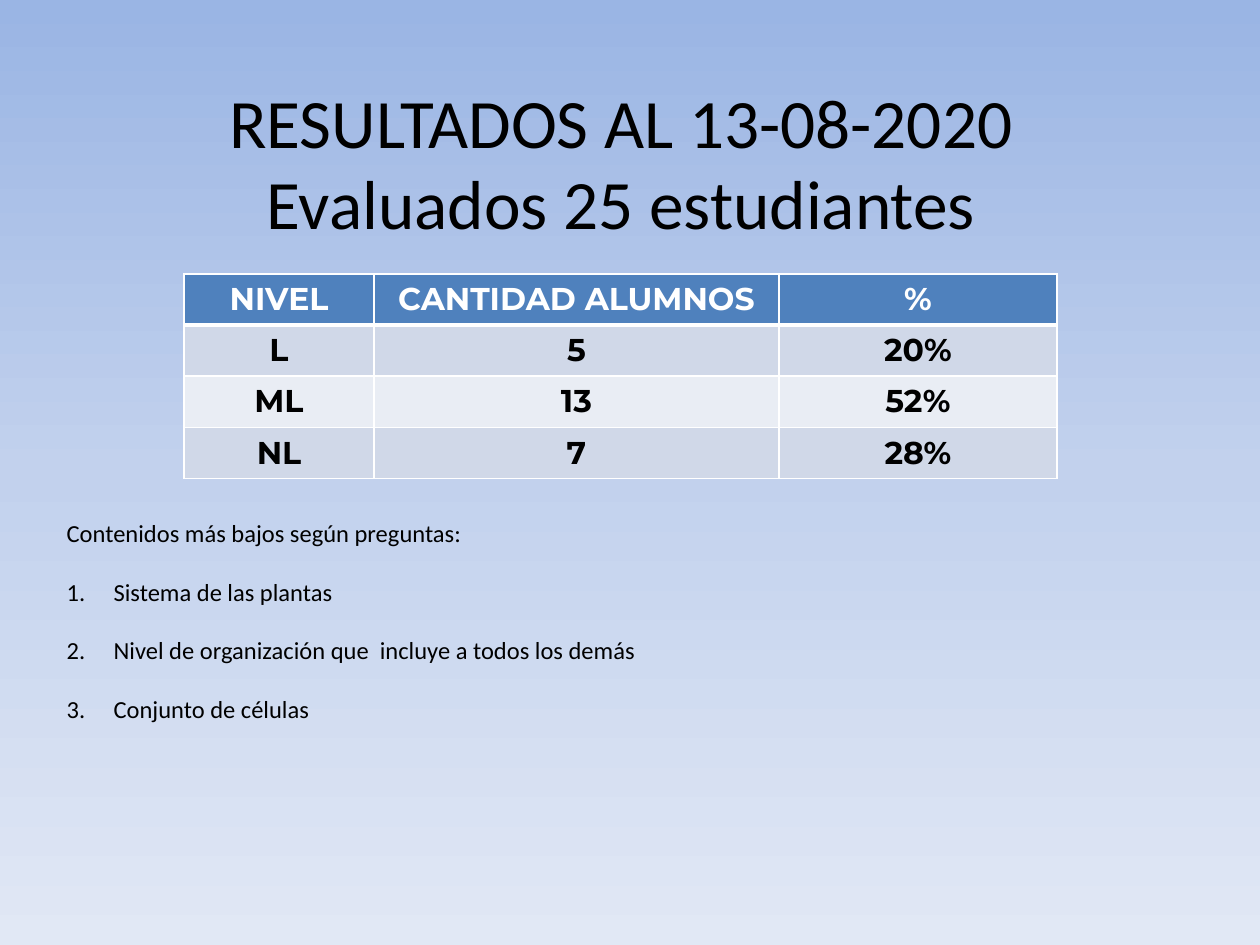
import copy

import pptx
import pptx.dml.color
import pptx.enum.text
import pptx.oxml.ns
import pptx.util
from lxml import etree

RGBColor = pptx.dml.color.RGBColor
BLACK = RGBColor(0x00, 0x00, 0x00)
WHITE = RGBColor(0xFF, 0xFF, 0xFF)
HEADER_BLUE = RGBColor(0x4F, 0x81, 0xBD)
BAND_DARK = RGBColor(0xD0, 0xD8, 0xE8)
BAND_LIGHT = RGBColor(0xE9, 0xED, 0xF4)
BACKGROUND_STOPS = [
    (0, RGBColor(0x9A, 0xB5, 0xE4)),
    (0.5, RGBColor(0xC2, 0xD1, 0xED)),
    (1, RGBColor(0xE1, 0xE8, 0xF5)),
]

PX_PER_INCH = 126
PAGE_SIZE = (1260, 945)
TITLE_BOX = (54, 86, 1134, 157)
TABLE_BOX = (184, 274, 873, 204)
LIST_BOX = (54, 512, 1181, 310)
COLUMN_WIDTHS = (190, 405, 278)
LIST_INDENT = 47

TITLE = "RESULTADOS AL 13-08-2020\vEvaluados 25 estudiantes"
RESULTS = [
    ("NIVEL", "CANTIDAD ALUMNOS", "%"),
    ("L", "5", "20%"),
    ("ML", "13", "52%"),
    ("NL", "7", "28%"),
]
LIST_HEADING = "Contenidos más bajos según preguntas:"
LIST_ITEMS = [
    "Sistema de las plantas",
    "Nivel de organización que  incluye a todos los demás",
    "Conjunto de células",
]

CENTER = pptx.enum.text.PP_ALIGN.CENTER
LEFT = pptx.enum.text.PP_ALIGN.LEFT
TITLE_FONT = {"name": "Calibri", "size": pptx.util.Pt(39.6)}
TABLE_FONT = {"name": "Montserrat", "size": pptx.util.Pt(18), "bold": True}
LIST_FONT = {"name": "Calibri", "size": pptx.util.Pt(14)}
TITLE_PARA = {"alignment": CENTER, "line_spacing": 0.97}
TABLE_PARA = {"alignment": CENTER}
LIST_PARA = {
    "alignment": LEFT,
    "space_before": pptx.util.Pt(0),
    "space_after": pptx.util.Pt(16.6),
}


def px(length):
    return pptx.util.Emu(round(length * 914400 / PX_PER_INCH))


def apply(target, values):
    for name, value in values.items():
        setattr(target, name, value)


def place(shape, box):
    apply(shape, dict(zip(("left", "top", "width", "height"), map(px, box))))


def write(para, text, para_format, font_format, color):
    para.text = text
    apply(para, para_format)
    for span in para.runs:
        apply(span.font, font_format)
        span.font.color.rgb = color
    for line_break in para._p.findall(pptx.oxml.ns.qn("a:br")):
        line_break.insert(0, copy.deepcopy(para.runs[0]._r.rPr))


def set_background(page):
    fill = page.background.fill
    fill.gradient()
    fill.gradient_angle = 270
    stop_list = page.element.find(".//" + pptx.oxml.ns.qn("a:gsLst"))
    stop_list.append(copy.deepcopy(stop_list[-1]))
    for stop, (position, color) in zip(fill.gradient_stops, BACKGROUND_STOPS):
        stop.position = position
        stop.color.rgb = color


def add_title(page, box):
    title = page.shapes.title
    place(title, box)
    frame = title.text_frame
    frame.auto_size = pptx.enum.text.MSO_AUTO_SIZE.NONE
    frame.vertical_anchor = pptx.enum.text.MSO_ANCHOR.MIDDLE
    write(frame.paragraphs[0], TITLE, TITLE_PARA, TITLE_FONT, BLACK)


def set_borders(cell, widths):
    qn = pptx.oxml.ns.qn
    properties = cell._tc.get_or_add_tcPr()
    for side, width in widths.items():
        line = etree.SubElement(properties, qn("a:ln" + side), w=str(pptx.util.Pt(width)))
        fill = etree.SubElement(line, qn("a:solidFill"))
        etree.SubElement(fill, qn("a:srgbClr"), val=str(WHITE))


def add_results(page, box):
    frame = page.shapes.add_table(len(RESULTS), len(COLUMN_WIDTHS), *map(px, box))
    table = frame.table
    for column, width in zip(table.columns, COLUMN_WIDTHS):
        column.width = px(width)
    for row_index, values in enumerate(RESULTS):
        table.rows[row_index].height = px(box[3] / len(RESULTS))
        is_header = row_index == 0
        band = BAND_DARK if row_index % 2 else BAND_LIGHT
        borders = {
            "L": 1,
            "R": 1,
            "T": 3 if row_index == 1 else 1,
            "B": 3 if is_header else 1,
        }
        for column_index, value in enumerate(values):
            cell = table.cell(row_index, column_index)
            set_borders(cell, borders)
            cell.fill.solid()
            cell.fill.fore_color.rgb = HEADER_BLUE if is_header else band
            write(cell.text_frame.paragraphs[0], value, TABLE_PARA, TABLE_FONT,
                  WHITE if is_header else BLACK)
    return frame


def set_numbering(para, numbered):
    properties = para._p.get_or_add_pPr()
    indent = px(LIST_INDENT) if numbered else 0
    properties.set("marL", str(indent))
    properties.set("indent", str(-indent))
    if numbered:
        etree.SubElement(properties, pptx.oxml.ns.qn("a:buFont"), typeface="+mj-lt")
        etree.SubElement(properties, pptx.oxml.ns.qn("a:buAutoNum"), type="arabicPeriod")
    else:
        etree.SubElement(properties, pptx.oxml.ns.qn("a:buNone"))


def add_contents(page, box):
    body = page.placeholders[1]
    place(body, box)
    frame = body.text_frame
    frame.auto_size = pptx.enum.text.MSO_AUTO_SIZE.NONE
    for index, text in enumerate([LIST_HEADING] + LIST_ITEMS):
        para = frame.add_paragraph() if index else frame.paragraphs[0]
        write(para, text, LIST_PARA, LIST_FONT, BLACK)
        set_numbering(para, index > 0)
    return body


def main():
    deck = pptx.Presentation()
    deck.slide_width, deck.slide_height = map(px, PAGE_SIZE)
    page = deck.slides.add_slide(deck.slide_layouts[1])
    set_background(page)
    add_title(page, TITLE_BOX)
    results = add_results(page, TABLE_BOX)
    contents = add_contents(page, LIST_BOX)
    contents.element.addprevious(results.element)
    deck.save("out.pptx")


if __name__ == "__main__":
    main()
